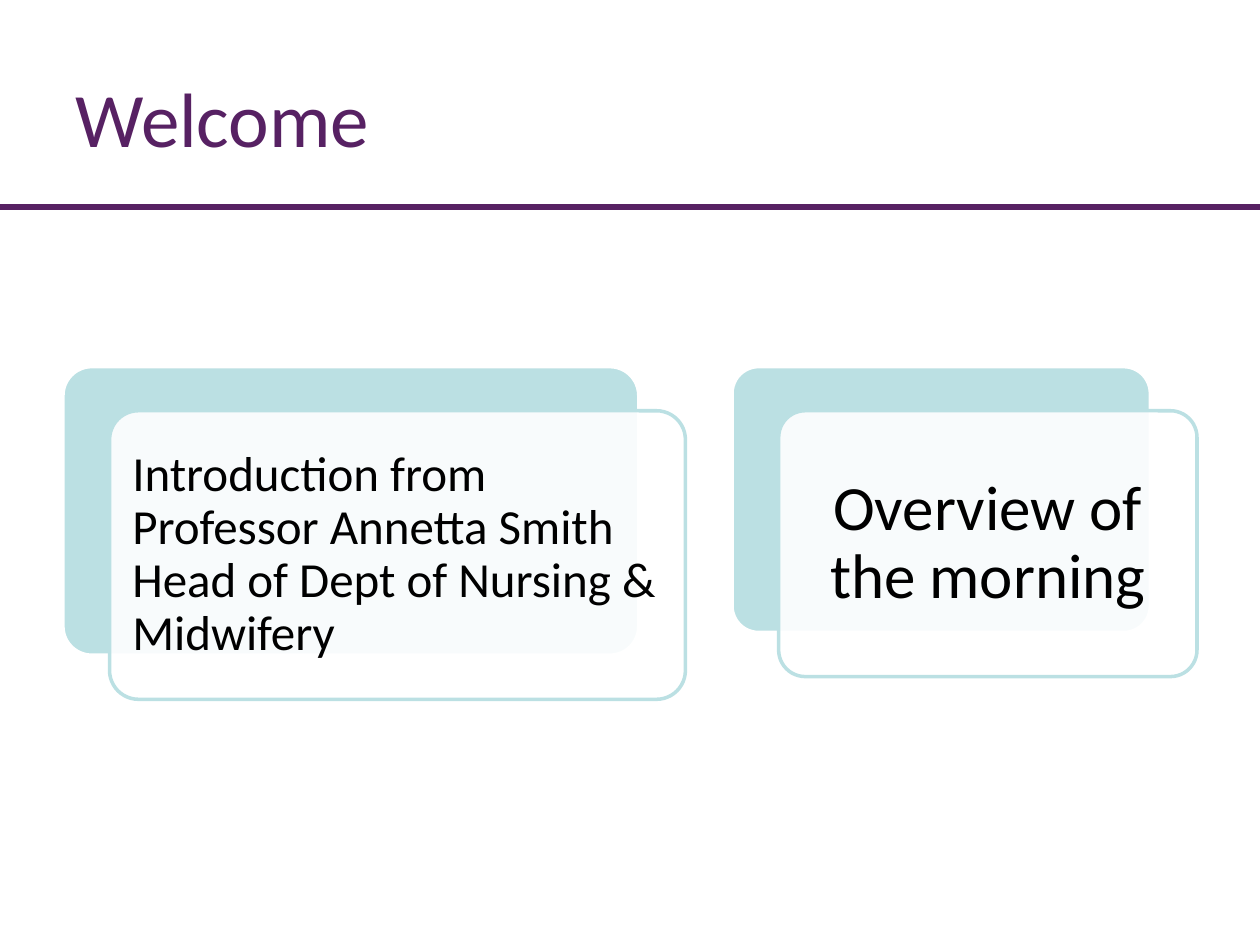
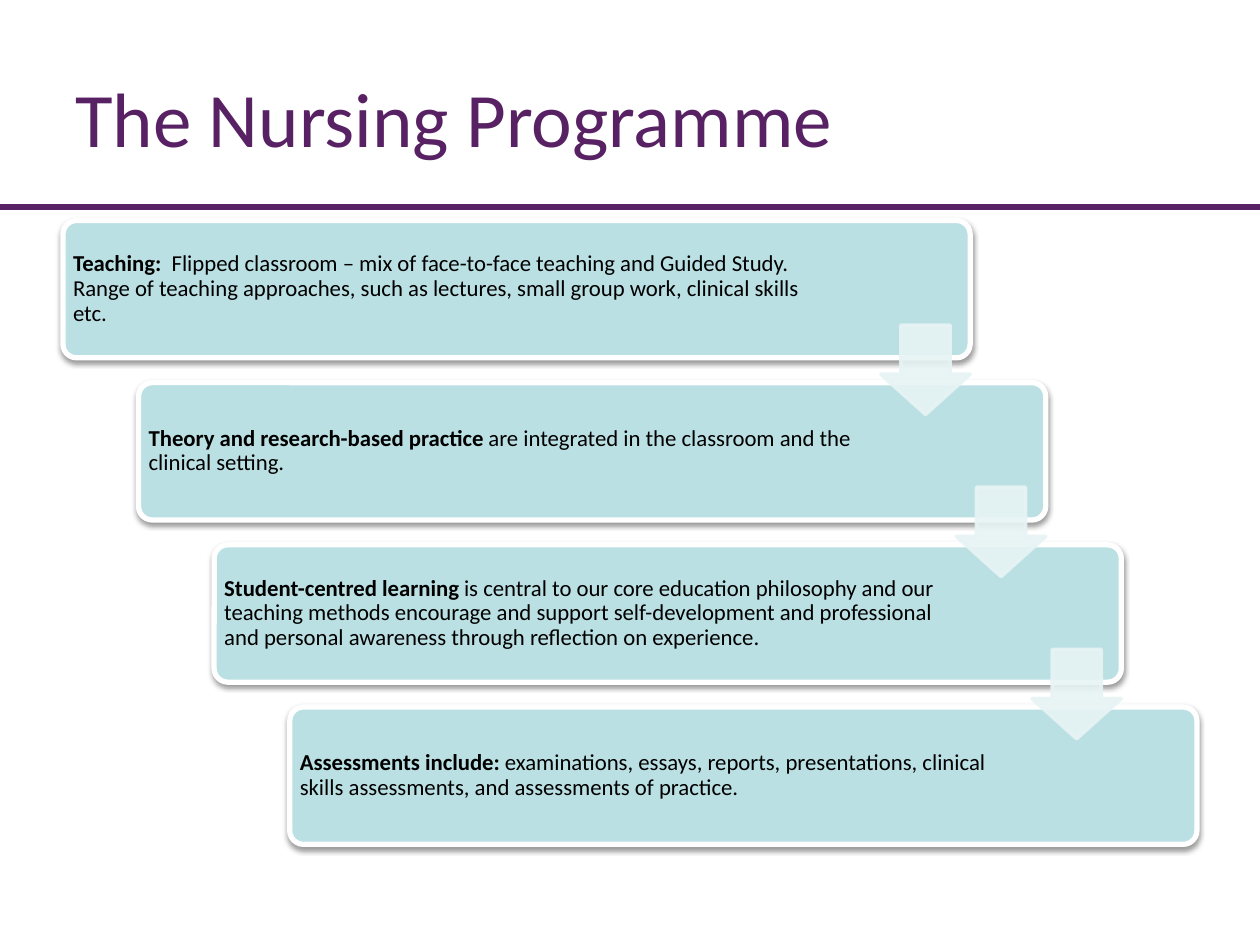
from dataclasses import dataclass

from lxml import etree
from pptx import Presentation
from pptx.dml.color import RGBColor
from pptx.enum.shapes import MSO_CONNECTOR, MSO_SHAPE
from pptx.enum.text import MSO_ANCHOR, PP_ALIGN
from pptx.oxml.ns import qn
from pptx.util import Inches, Pt

ROUNDED = MSO_SHAPE.ROUNDED_RECTANGLE
DOWN_ARROW = MSO_SHAPE.DOWN_ARROW
STRAIGHT = MSO_CONNECTOR.STRAIGHT
MIDDLE = MSO_ANCHOR.MIDDLE
LEFT, CENTER = PP_ALIGN.LEFT, PP_ALIGN.CENTER

COLORS = {
    "purple": "572163",
    "teal": "BBE0E3",
    "pale": "E7F3F4",
    "white": "FFFFFF",
    "black": "000000",
}
FONT = "Calibri"
SLIDE_WIDTH, SLIDE_HEIGHT = 10, 7.5
RULE_TOP = 1.64

CARD_TOP = 2.91
CARD_SHIFT = (0.37, 0.35)
CARD_PADDING = 0.06

STEP_LEFT, STEP_TOP = 0.5, 1.75
STEP_WIDTH, STEP_HEIGHT = 7.2, 1.09
STEP_SHIFT = (0.6, 1.287)
STEP_PADDING = 0.03
ARROW_SHIFT = (6.49, 0.83)
ARROW_SIZE = 0.71


@dataclass(frozen=True)
class Card:
    text: str
    left: float
    width: float
    height: float
    size: float
    inset: float
    align: PP_ALIGN


@dataclass(frozen=True)
class Step:
    lead: str
    text: str
    text_width: float = 5.83


CARDS = [
    Card("Introduction from Professor Annetta Smith Head of Dept of Nursing & Midwifery",
         0.5, 4.57, 2.29, 28, 0.12, LEFT),
    Card("Overview of the morning", 5.81, 3.32, 2.11, 36, 0.15, CENTER),
]

STEPS = [
    Step("Teaching:  ",
         "Flipped classroom – mix of face-to-face teaching and Guided Study. "
         "Range of teaching approaches, such as lectures, small group work, "
         "clinical skills etc.", 5.93),
    Step("Theory and research-based practice ",
         "are integrated in the classroom and the clinical setting."),
    Step("Student-centred learning ",
         "is central to our core education philosophy and our teaching methods "
         "encourage and support self-development and professional and personal "
         "awareness through reflection on experience."),
    Step("Assessments include: ",
         "examinations, essays, reports, presentations, clinical skills "
         "assessments, and assessments of practice."),
]


def rgb(name: str):
    return RGBColor.from_string(COLORS[name])


def set_opacity(fill_parent, percent: int):
    color = fill_parent.find(qn("a:solidFill")).find(qn("a:srgbClr"))
    etree.SubElement(color, qn("a:alpha"), val=str(percent * 1000))


def add_shadow(shape):
    effects = shape.element.spPr.find(qn("a:effectLst"))
    shadow = etree.SubElement(effects, qn("a:outerShdw"), blurRad=str(Pt(3.1)),
                              dist=str(Pt(1.6)), dir="5400000", rotWithShape="0")
    color = etree.SubElement(shadow, qn("a:srgbClr"), val=COLORS["black"])
    etree.SubElement(color, qn("a:alpha"), val="38000")


def add_figure(page, kind, left: float, top: float, width: float, height: float, *,
               fill: str, line: str, line_width: float = 2, adjust: tuple = (0.1,)):
    shape = page.shapes.add_shape(kind, Inches(left), Inches(top),
                                  Inches(width), Inches(height))
    shape.shadow.inherit = False
    shape.fill.solid()
    shape.fill.fore_color.rgb = rgb(fill)
    shape.line.color.rgb = rgb(line)
    shape.line.width = Pt(line_width)
    for index, value in enumerate(adjust):
        shape.adjustments[index] = value
    return shape


def add_text(page, text: str, left: float, top: float, width: float, height: float, *,
             size: float, color: str = "black", lead: str = "", align=LEFT,
             inset: float = 0.1, spacing: float = 0.9):
    box = page.shapes.add_textbox(Inches(left), Inches(top), Inches(width), Inches(height))
    frame = box.text_frame
    frame.word_wrap = True
    frame.vertical_anchor = MIDDLE
    frame.margin_left = frame.margin_right = Inches(inset)
    frame.margin_top = frame.margin_bottom = Inches(inset)
    para = frame.paragraphs[0]
    para.alignment = align
    para.line_spacing = spacing
    for content, bold in ((lead, True), (text, False)):
        if content:
            span = para.add_run()
            span.text = content
            span.font.name = FONT
            span.font.size = Pt(size)
            span.font.bold = bold
            span.font.color.rgb = rgb(color)


def add_page(deck, title: str):
    page = deck.slides.add_slide(deck.slide_layouts[6])
    rule = page.shapes.add_connector(STRAIGHT, Inches(0), Inches(RULE_TOP),
                                     Inches(SLIDE_WIDTH), Inches(RULE_TOP))
    rule.line.color.rgb = rgb("purple")
    rule.line.width = Pt(3.5)
    etree.SubElement(rule.element.spPr, qn("a:effectLst"))
    add_text(page, title, 0.5, 0.3, 9, 1.25, size=44, color="purple", spacing=1)
    return page


def draw_card(page, card: Card):
    left, top = card.left + CARD_SHIFT[0], CARD_TOP + CARD_SHIFT[1]
    add_figure(page, ROUNDED, card.left, CARD_TOP, card.width, card.height,
               fill="teal", line="white")
    front = add_figure(page, ROUNDED, left, top, card.width, card.height,
                       fill="white", line="teal")
    set_opacity(front.element.spPr, 90)
    add_text(page, card.text, left + CARD_PADDING, top + CARD_PADDING,
             card.width - 2 * CARD_PADDING, card.height - 2 * CARD_PADDING,
             size=card.size, align=card.align, inset=card.inset)


def step_position(index: int):
    return STEP_LEFT + index * STEP_SHIFT[0], STEP_TOP + index * STEP_SHIFT[1]


def draw_step(page, step: Step, index: int):
    left, top = step_position(index)
    panel = add_figure(page, ROUNDED, left, top, STEP_WIDTH, STEP_HEIGHT,
                       fill="teal", line="white", line_width=3)
    add_shadow(panel)
    add_text(page, step.text, left + STEP_PADDING, top + STEP_PADDING,
             step.text_width, STEP_HEIGHT - 2 * STEP_PADDING,
             size=13, lead=step.lead, inset=0.05)


def draw_arrow(page, index: int):
    left, top = step_position(index)
    arrow = add_figure(page, DOWN_ARROW, left + ARROW_SHIFT[0], top + ARROW_SHIFT[1],
                       ARROW_SIZE, ARROW_SIZE, fill="pale", line="pale",
                       adjust=(0.55, 0.45))
    properties = arrow.element.spPr
    set_opacity(properties, 90)
    set_opacity(properties.find(qn("a:ln")), 90)


def main():
    deck = Presentation()
    deck.slide_width = Inches(SLIDE_WIDTH)
    deck.slide_height = Inches(SLIDE_HEIGHT)

    welcome = add_page(deck, "Welcome")
    for card in CARDS:
        draw_card(welcome, card)

    programme = add_page(deck, "The Nursing Programme")
    for index, step in enumerate(STEPS):
        draw_step(programme, step, index)
    for index in range(len(STEPS) - 1):
        draw_arrow(programme, index)

    deck.save("out.pptx")


if __name__ == "__main__":
    main()
